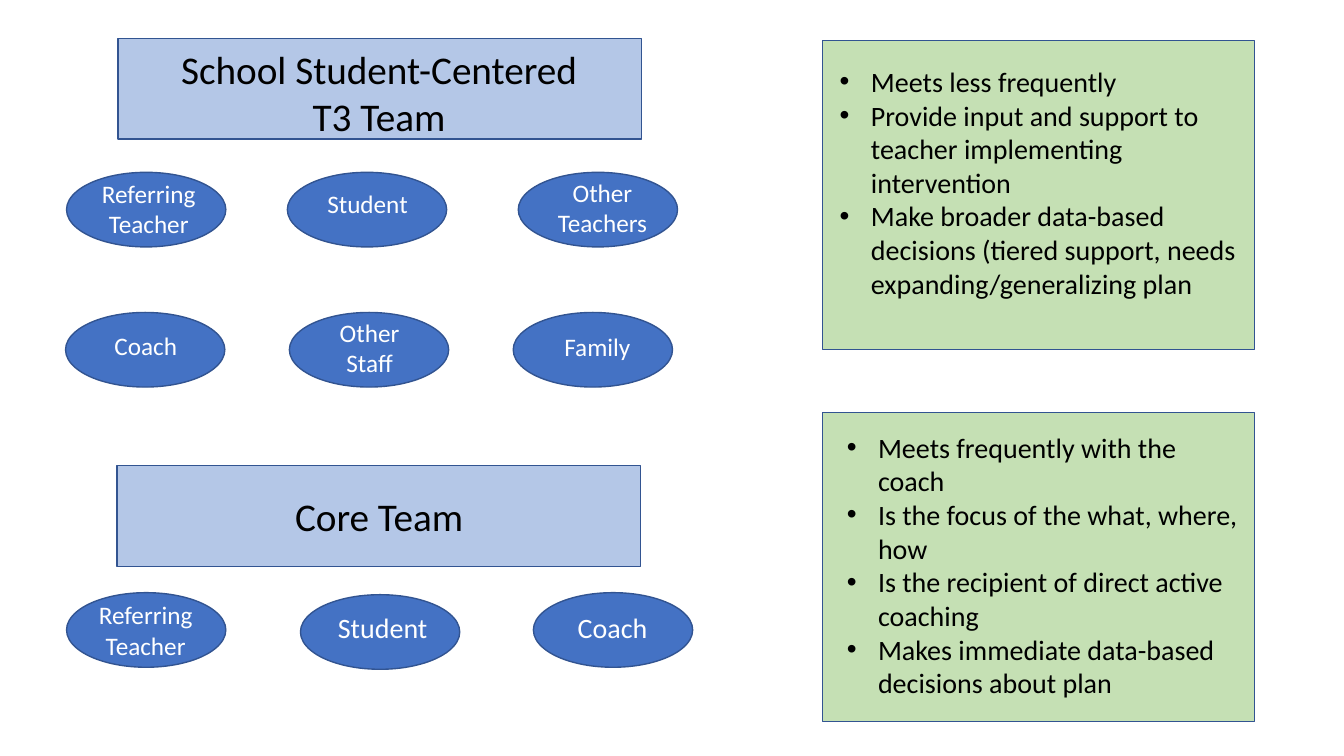
from dataclasses import dataclass

from lxml import etree
from pptx import Presentation
from pptx.dml.color import RGBColor
from pptx.enum.shapes import MSO_SHAPE
from pptx.enum.text import MSO_ANCHOR, MSO_AUTO_SIZE, PP_ALIGN
from pptx.oxml.ns import qn
from pptx.util import Inches, Pt

RECT, OVAL = MSO_SHAPE.RECTANGLE, MSO_SHAPE.OVAL
LEFT, CENTER = PP_ALIGN.LEFT, PP_ALIGN.CENTER
TOP, GROW = MSO_ANCHOR.TOP, MSO_AUTO_SIZE.SHAPE_TO_FIT_TEXT

WIDTH, HEIGHT = Inches(13.33), Inches(7.5)
COL, ROW = WIDTH / 13.33, HEIGHT / 7.5
LINE, PAD = 1.22, 0.1
INDENT = Inches(0.31)


@dataclass(frozen=True)
class Theme:
    font: str = "Calibri"
    black: str = "000000"
    white: str = "FFFFFF"
    edge: str = "325491"
    pale: str = "B4C7E7"
    green: str = "C5E0B4"
    blue: str = "4472C4"
    title: int = 28
    body: int = 20
    label: int = 18


THEME = Theme()


@dataclass(frozen=True)
class Kind:
    """A sort of block: its outline, and the width and look of its text."""
    form: MSO_SHAPE
    fill: str
    cols: float
    rows: float
    span: float
    ink: str
    size: int
    align: PP_ALIGN = CENTER
    bullet: bool = False


@dataclass(frozen=True)
class Block:
    """A block at col, row; its text is set in by dx, dy and fills some lines."""
    kind: Kind
    col: float
    row: float
    dx: float
    dy: float
    lines: int
    text: tuple[str, ...]
    size: int = 0


BANNER = Kind(RECT, THEME.pale, 5.19, 1, 4.9, THEME.black, THEME.title)
MEMBER = Kind(OVAL, THEME.blue, 1.58, 0.74, 1.19, THEME.white, THEME.label)
PANEL = Kind(RECT, THEME.green, 4.28, 3.07, 4.15, THEME.black, THEME.body,
             LEFT, True)

BLOCKS = (
    Block(BANNER, 1.17, 0.38, 0.14, 0.02, 2,
          ("School Student-Centered", "T3 Team")),
    Block(BANNER, 1.16, 4.62, 0.15, 0.21, 1, ("Core Team",)),
    Block(PANEL, 8.16, 0.4, 0.07, 0.19, 7, (
        "Meets less frequently",
        "Provide input and support to teacher implementing intervention",
        "Make broader data-based decisions (tiered support, needs "
        "expanding/generalizing plan")),
    Block(PANEL, 8.16, 4.09, 0.14, 0.13, 8, (
        "Meets frequently with the coach",
        "Is the focus of the what, where, how",
        "Is the recipient of direct active coaching",
        "Makes immediate data-based decisions about plan")),
    Block(MEMBER, 0.66, 1.71, 0.22, 0.01, 2, ("Referring Teacher",)),
    Block(MEMBER, 2.85, 1.71, 0.2, 0.11, 1, ("Student",)),
    Block(MEMBER, 5.14, 1.71, 0.24, 0, 2, ("Other Teachers",)),
    Block(MEMBER, 0.65, 3.1, 0.2, 0.13, 1, ("Coach",)),
    Block(MEMBER, 2.87, 3.1, 0.2, 0, 2, ("Other Staff",)),
    Block(MEMBER, 5.09, 3.1, 0.24, 0.14, 1, ("Family",)),
    Block(MEMBER, 0.66, 5.88, 0.19, 0.02, 2, ("Referring Teacher",)),
    Block(MEMBER, 2.98, 5.9, 0.22, 0.11, 1, ("Student",), THEME.body),
    Block(MEMBER, 5.29, 5.88, 0.19, 0.13, 1, ("Coach",), THEME.body),
)


def place(col: float, row: float, cols: float, rows: float) -> tuple[int, ...]:
    """Turn grid columns and rows into slide lengths."""
    return (round(col * COL), round(row * ROW),
            round(cols * COL), round(rows * ROW))


def assign(item, values: dict) -> None:
    for name, value in values.items():
        setattr(item, name, value)


def add_bullet(para) -> None:
    props = para._p.get_or_add_pPr()
    props.set("marL", str(INDENT))
    props.set("indent", str(-INDENT))
    etree.SubElement(props, qn("a:buFont"), typeface="Arial")
    etree.SubElement(props, qn("a:buChar"), char="•")


def draw_form(slide, block: Block) -> None:
    kind = block.kind
    form = slide.shapes.add_shape(
        kind.form, *place(block.col, block.row, kind.cols, kind.rows))
    form.shadow.inherit = False
    form.fill.solid()
    form.fill.fore_color.rgb = RGBColor.from_string(kind.fill)
    form.line.color.rgb = RGBColor.from_string(THEME.edge)
    form.line.width = Pt(1)


def draw_text(slide, block: Block) -> None:
    kind = block.kind
    size = block.size or kind.size
    tall = block.lines * size * LINE / 72 + PAD
    box = slide.shapes.add_textbox(*place(
        block.col + block.dx, block.row + block.dy, kind.span, tall))
    frame = box.text_frame
    assign(frame, {"word_wrap": True, "auto_size": GROW,
                   "vertical_anchor": TOP})
    frame.text = "\n".join(block.text)
    for para in frame.paragraphs:
        para.alignment = kind.align
        if kind.bullet:
            add_bullet(para)
        font = para.runs[0].font
        assign(font, {"name": THEME.font, "size": Pt(size)})
        font.color.rgb = RGBColor.from_string(kind.ink)


def main() -> None:
    deck = Presentation()
    assign(deck, {"slide_width": WIDTH, "slide_height": HEIGHT})
    slide = deck.slides.add_slide(deck.slide_layouts[6])
    for block in BLOCKS:
        draw_form(slide, block)
        draw_text(slide, block)
    deck.save("out.pptx")


if __name__ == "__main__":
    main()
